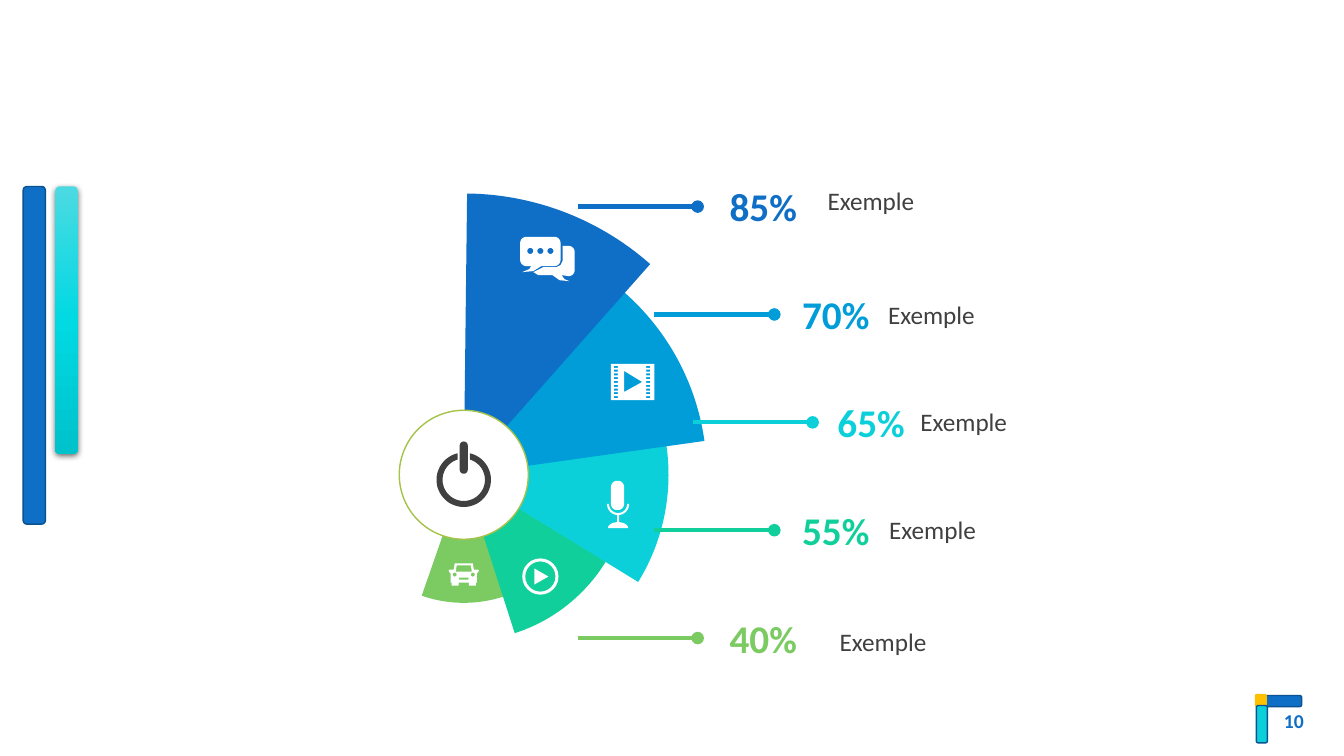
from copy import deepcopy
from math import cos, radians, sin

from pptx import Presentation, util as u
from pptx.dml.color import RGBColor
from pptx.enum import shapes, text
from pptx.oxml import parse_xml
from pptx.oxml.ns import nsdecls, qn

KIND = shapes.MSO_SHAPE
HUB = (4.6, 4.71)
BLUE, SKY, CYAN, MINT, LEAF = "0F6FC6", "009DD9", "0BD0D9", "10CF9B", "7CCA62"
WHITE, DARK, EDGE = "FFFFFF", "404040", "0B5292"
TOP, PITCH = 2.05, 1.07

# colour, radius and turn of each wedge, from back to front
WEDGES = [
    (LEAF, 1.27, 199.2),
    (MINT, 1.65, 162.2),
    (CYAN, 2.03, 121.6),
    (SKY, 2.41, 82),
    (BLUE, 2.79, 41.5),
]
# colour, share, line start, share left, label left, label top
CALLS = [
    (BLUE, "85", 5.73, 7.09, 8.11, 1.79),
    (SKY, "70", 6.49, 7.81, 8.71, 2.92),
    (CYAN, "65", 6.87, 8.16, 9.03, 3.98),
    (MINT, "55", 6.49, 7.81, 8.72, 5.05),
    (LEAF, "40", 5.73, 7.09, 8.23, 6.16),
]


def paint(part, color):
    """Give a fill or line format a solid hex colour."""
    part.solid()
    part.fore_color.rgb = RGBColor.from_string(color)


def finish(shape, fill, line=None):
    shape.shadow.inherit = False
    paint(shape.fill, fill)
    if line:
        paint(shape.line.fill, line)
        shape.line.width = u.Pt(1)
    else:
        shape.line.fill.background()
    return shape


def add_form(slide, kind, box, fill, line=None, turn=0):
    shape = slide.shapes.add_shape(kind, *map(u.Inches, box))
    shape.rotation = turn
    return finish(shape, fill, line)


def add_text(slide, box, words, size, color, bold=False,
             align=text.PP_ALIGN.LEFT, anchor=text.MSO_ANCHOR.TOP):
    """Add one paragraph, one run per word, and return it."""
    frame = slide.shapes.add_textbox(*map(u.Inches, box)).text_frame
    frame.word_wrap = True
    frame.vertical_anchor = anchor
    para = frame.paragraphs[0]
    para.alignment = align
    para.font.name, para.font.size, para.font.bold = "Calibri", u.Pt(size), bold
    para.font.color.rgb = RGBColor.from_string(color)
    for word in words:
        para.add_run().text = word
    return para


def add_icon(slide, loops, color=WHITE):
    """Draw closed loops of points as one shape; inner loops are holes."""
    loops = [[(x * 1000, y * 1000) for x, y in loop] for loop in loops]
    pen = slide.shapes.build_freeform(*loops[0][0], scale=914.4)
    for index, loop in enumerate(loops):
        if index:
            pen.move_to(*loop[0])
        pen.add_line_segments(loop[1:], close=True)
    finish(pen.convert_to_shape(), color)


def arc(x, y, r, start=0, end=360, tall=None, steps=24):
    turns = [radians(start + (end - start) * i / steps) for i in range(steps + 1)]
    return [(x + r * cos(t), y + (tall or r) * sin(t)) for t in turns]


def rect(x, y, w, h, r=0, tail=()):
    """Outline a box with round corners and a tail on its lower side."""
    if not r:
        return [(x, y), (x + w, y), (x + w, y + h), (x, y + h)]
    left, right, top, low = x + r, x + w - r, y + r, y + h - r
    return [*arc(left, top, r, 180, 270, steps=8), *arc(right, top, r, 270, 360, steps=8),
            *arc(right, low, r, 0, 90, steps=8), *tail, *arc(left, low, r, 90, 180, steps=8)]


def mirror(axis, half):
    return [(axis + x, y) for x, y in half] + [(axis - x, y) for x, y in half[::-1]]


def chat():
    dots = [arc(x, 2.49, .03) for x in (5.26, 5.36, 5.46)]
    front = rect(5.16, 2.35, .4, .29, .06,
                 [(5.37, 2.64), (5.29, 2.69), (5.18, 2.7), (5.25, 2.67), (5.27, 2.64)])
    back = [(5.58, 2.44), *arc(5.64, 2.5, .06, 270, 360), *arc(5.64, 2.68, .06, 0, 90),
            (5.57, 2.73), (5.6, 2.77), (5.65, 2.79), (5.55, 2.78), (5.48, 2.73),
            (5.34, 2.73), (5.29, 2.7), (5.39, 2.65), (5.52, 2.65), (5.56, 2.63),
            (5.58, 2.59)]
    return [front, back, *dots]


def film():
    holes = [rect(x, 3.63 + .3 * row / 8, .04, .02) for x in (6.09, 6.41) for row in range(9)]
    return [rect(6.06, 3.61, .43, .36), [(6.19, 3.68), (6.37, 3.79), (6.19, 3.89)], *holes]


def mic():
    cradle = arc(6.13, 5, .11, 0, 180) + arc(6.13, 5, .09, 180, 0)
    return [rect(6.06, 4.77, .13, .29, .06), cradle, rect(6.12, 5.11, .02, .07),
            arc(6.13, 5.24, .1, 180, 360, tall=.06)]


def play():
    return [arc(5.36, 5.72, .18), arc(5.36, 5.72, .15),
            [(5.3, 5.64), (5.44, 5.72), (5.3, 5.8)]]


def car():
    body = mirror(4.6, [(.09, 5.59), (.1, 5.65), (.14, 5.65), (.15, 5.66), (.14, 5.68),
                        (.13, 5.69), (.13, 5.78), (.12, 5.78), (.12, 5.81), (.05, 5.81),
                        (.05, 5.78)])
    window = mirror(4.6, [(.07, 5.61), (.08, 5.67)])
    lamps = [arc(x, 5.7, .02) for x in (4.51, 4.69)]
    return [body, window, *lamps, rect(4.55, 5.73, .1, .02, .01)]


def power():
    ring = arc(4.6, 4.76, .27, -77, 257, steps=48) + arc(4.6, 4.76, .21, 253, -73, steps=48)
    return [ring, rect(4.56, 4.38, .08, .32, .04)]


def add_glow(slide):
    """Add the short side bar with its gradient and shadow."""
    bar = add_form(slide, KIND.ROUNDED_RECTANGLE, (.55, 1.85, .22, 2.65), CYAN)
    bar.fill.gradient()
    bar.fill.gradient_angle = 270
    stops = bar._element.spPr.find(qn("a:gradFill")).find(qn("a:gsLst"))
    stops.insert(1, deepcopy(stops[0]))
    for stop, color, place in zip(bar.fill.gradient_stops,
                                  ("4BDAE2", "01D9E3", "00C2CB"), (0, .5, 1)):
        stop.color.rgb = RGBColor.from_string(color)
        stop.position = place
    bar._element.spPr.find(qn("a:effectLst")).append(parse_xml(
        f'<a:outerShdw {nsdecls("a")} blurRad="57150" dist="19050" dir="5400000" rotWithShape="0">'
        '<a:srgbClr val="000000"><a:alpha val="63000"/></a:srgbClr></a:outerShdw>'))


def add_frame(slide):
    bar = KIND.ROUNDED_RECTANGLE
    add_form(slide, bar, (.23, 1.85, .22, 3.35), BLUE, EDGE)
    add_glow(slide)
    add_form(slide, bar, (12.54, 6.9, .37, .11), BLUE, EDGE)
    add_form(slide, bar, (12.44, 6.89, .13, .12), "FFC000", turn=90)
    add_form(slide, bar, (12.33, 7.13, .37, .11), CYAN, EDGE, 90)
    add_text(slide, (10.03, 6.95, 3, .4), ["10"], 14, BLUE, True,
             text.PP_ALIGN.RIGHT, text.MSO_ANCHOR.MIDDLE)


def add_disc(slide, kind, r, fill, line=None, turn=0):
    x, y = HUB
    return add_form(slide, kind, (x - r, y - r, 2 * r, 2 * r), fill, line, turn)


def add_call(slide, row, color, share, start, left, label, top):
    y = TOP + row * PITCH
    line = slide.shapes.add_connector(
        shapes.MSO_CONNECTOR.STRAIGHT, *map(u.Inches, (start, y, start + 1.19, y)))
    paint(line.line.fill, color)
    line.line.width = u.Pt(3)
    line.line._get_or_add_ln().append(parse_xml(f'<a:tailEnd {nsdecls("a")} type="oval"/>'))
    line._element.spPr.append(parse_xml(f'<a:effectLst {nsdecls("a")}/>'))
    para = add_text(slide, (left, y - .52, .96, 1.03), [share, "%"], 28, color, True,
                    text.PP_ALIGN.CENTER, text.MSO_ANCHOR.MIDDLE)
    para.runs[1].font.size = u.Pt(27)
    add_text(slide, (label, top, 1.64, .51), ["Exemple"], 18, DARK)


def main():
    deck = Presentation()
    deck.slide_width, deck.slide_height = u.Inches(13.33), u.Inches(7.5)
    slide = deck.slides.add_slide(deck.slide_layouts[6])
    add_frame(slide)
    for color, r, turn in WEDGES:
        wedge = add_disc(slide, KIND.PIE, r, color, turn=turn)
        wedge.adjustments[0], wedge.adjustments[1] = 137.51, 162
    add_disc(slide, KIND.OVAL, .64, WHITE, "A5C249")
    for row, call in enumerate(CALLS):
        add_call(slide, row, *call)
    for icon in (chat, film, mic, play, car):
        add_icon(slide, icon())
    add_icon(slide, power(), DARK)
    deck.save("out.pptx")


if __name__ == "__main__":
    main()
